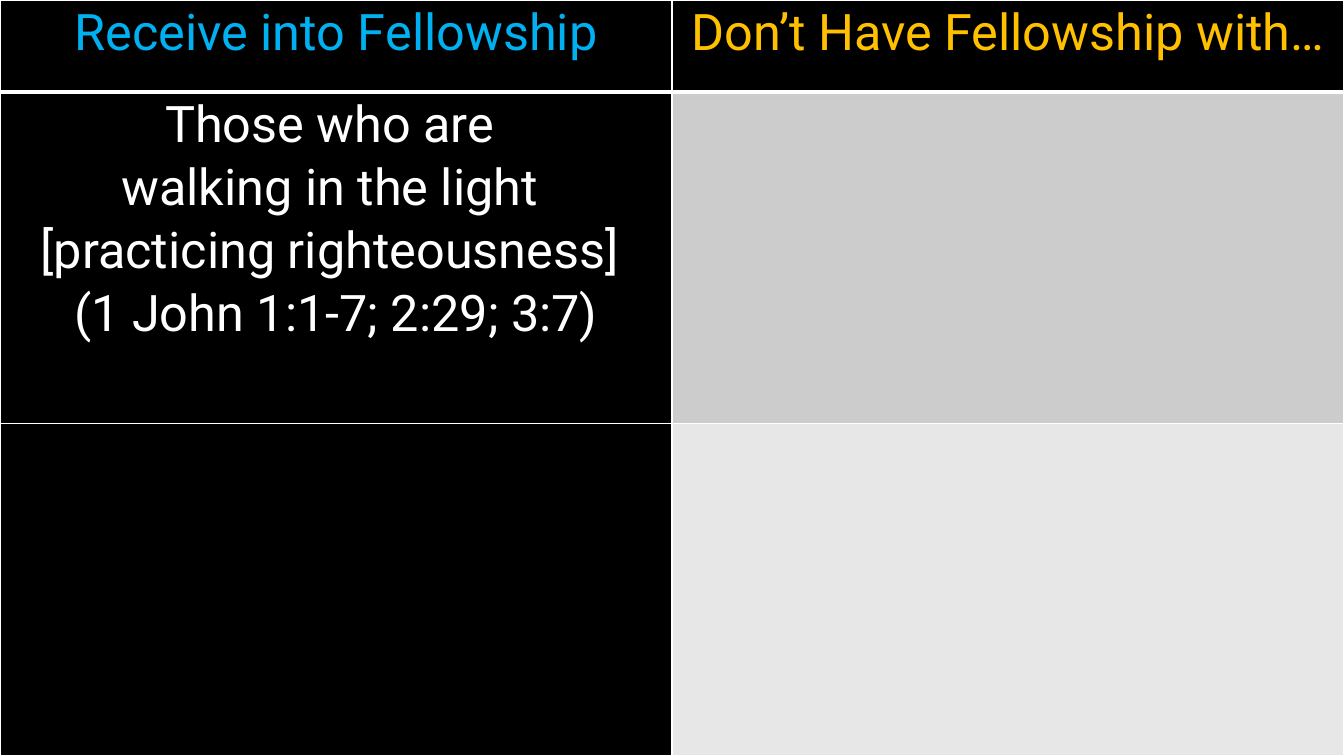
from lxml.etree import SubElement
from pptx import Presentation
from pptx.dml.color import RGBColor
from pptx.enum.text import PP_ALIGN as Align
from pptx.oxml.ns import qn
from pptx.util import Cm, Pt

BLACK, WHITE, BLUE, AMBER = "000000", "FFFFFF", "00B0F0", "FFC000"
DARK_GREY, LIGHT_GREY = "CCCCCC", "E7E7E7"
WIDTH, HEIGHT, HEADER_HEIGHT = 33.87, 19.05, 2.31


def colour(value):
    return RGBColor.from_string(value)


class FellowshipSlide:
    font = "Roboto"
    size = 36
    border = WHITE

    def __init__(self, deck):
        self.slide = deck.slides.add_slide(deck.slide_layouts[6])

    def background(self, value):
        fill = self.slide.background.fill
        fill.solid()
        fill.fore_color.rgb = colour(value)

    def table(self, rows):
        count, columns = len(rows), len(rows[0])
        comparison = self.slide.shapes.add_table(
            count, columns, 0, 0, Cm(WIDTH), Cm(HEIGHT)).table
        for column in comparison.columns:
            column.width = Cm(WIDTH / columns)
        body_height = (HEIGHT - HEADER_HEIGHT) / (count - 1)
        for r, row in enumerate(rows):
            comparison.rows[r].height = Cm(body_height if r else HEADER_HEIGHT)
            for c, (lines, ink, fill) in enumerate(row):
                cell = comparison.cell(r, c)
                self.cell(cell, lines, ink, fill)
                self.borders(cell, top=3 if r == 1 else 1, bottom=1 if r else 3)

    def cell(self, cell, lines, ink, fill):
        cell.fill.solid()
        cell.fill.fore_color.rgb = colour(fill)
        cell.margin_left = cell.margin_right = Cm(0.19)
        cell.margin_top = cell.margin_bottom = 0
        if not lines:
            return
        cell.text = "\n".join(lines)
        for paragraph in cell.text_frame.paragraphs:
            paragraph.alignment = Align.CENTER
            paragraph.line_spacing = 1.07
            paragraph.font.name = self.font
            paragraph.font.size = Pt(self.size)
            paragraph.font.bold = False
            paragraph.font.color.rgb = colour(ink)

    def borders(self, cell, top, bottom):
        properties = cell._tc.get_or_add_tcPr()
        sides = (("a:lnL", 1), ("a:lnR", 1), ("a:lnT", top), ("a:lnB", bottom))
        for position, (side, width) in enumerate(sides):
            line = SubElement(properties, qn(side), w=str(Pt(width)))
            fill = SubElement(line, qn("a:solidFill"))
            SubElement(fill, qn("a:srgbClr"), val=self.border)
            properties.insert(position, line)


def main():
    deck = Presentation()
    deck.slide_width, deck.slide_height = Cm(WIDTH), Cm(HEIGHT)
    fellowship = FellowshipSlide(deck)
    fellowship.background(BLACK)
    walking_in_light = [
        "Those who are ",
        "walking in the light ",
        "[practicing righteousness] ",
        "(1 John 1:1-7; 2:29; 3:7)",
    ]
    fellowship.table([
        [(["Receive into Fellowship"], BLUE, BLACK),
         (["Don’t Have Fellowship with…"], AMBER, BLACK)],
        [(walking_in_light, WHITE, BLACK), ([], WHITE, DARK_GREY)],
        [([], WHITE, BLACK), ([], WHITE, LIGHT_GREY)],
    ])
    deck.save("out.pptx")


if __name__ == "__main__":
    main()
